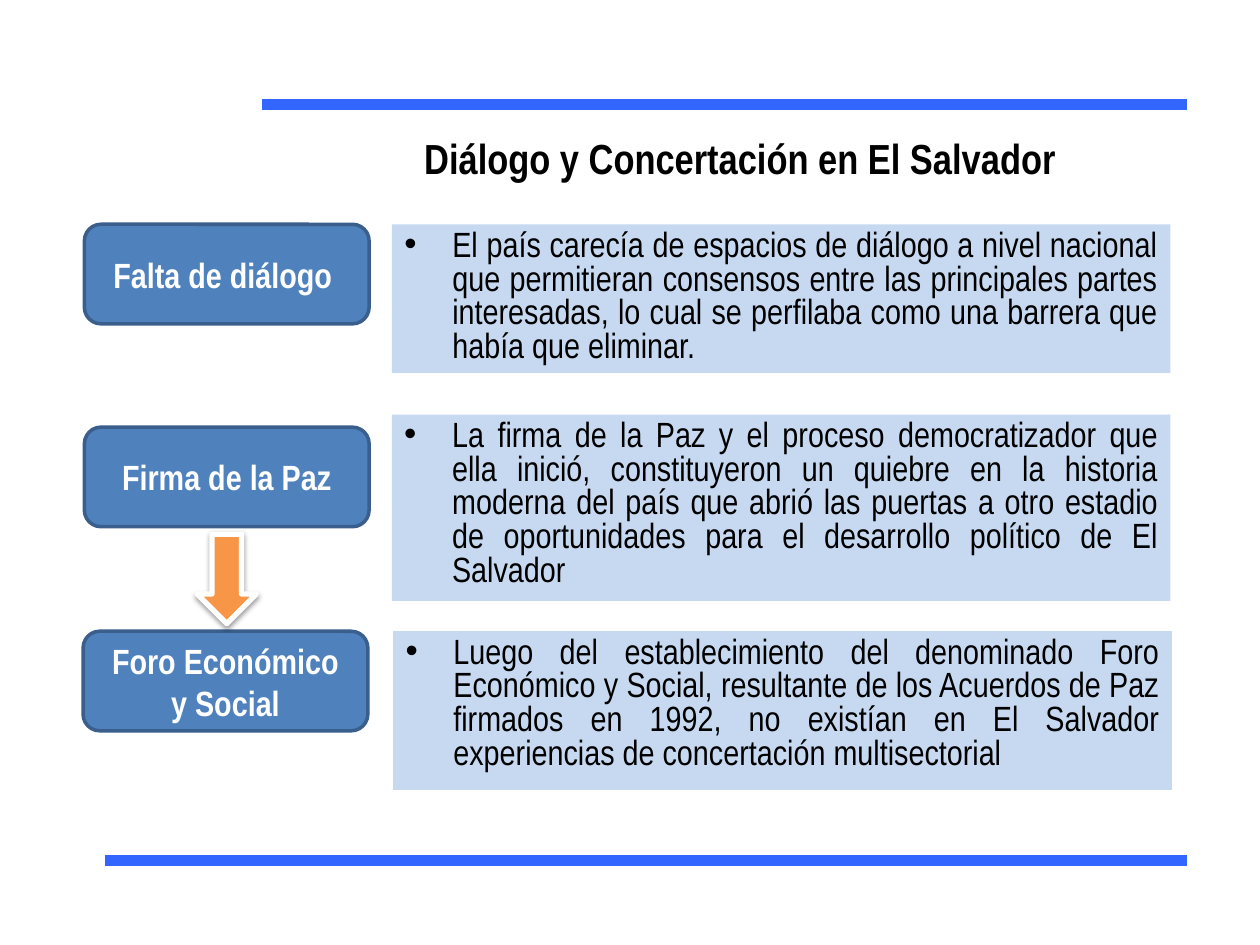
from collections import namedtuple

from lxml import etree
from pptx import Presentation
from pptx.dml.color import RGBColor
from pptx.enum.shapes import MSO_CONNECTOR, MSO_SHAPE
from pptx.enum.text import MSO_ANCHOR, MSO_AUTO_SIZE, PP_ALIGN
from pptx.oxml import parse_xml
from pptx.oxml.ns import nsdecls, qn
from pptx.util import Inches, Pt

TOP, MIDDLE = MSO_ANCHOR.TOP, MSO_ANCHOR.MIDDLE
CENTER, JUSTIFY = PP_ALIGN.CENTER, PP_ALIGN.JUSTIFY
STRAIGHT = MSO_CONNECTOR.STRAIGHT
ROUNDED, RECTANGLE, DOWN_ARROW = (
    MSO_SHAPE.ROUNDED_RECTANGLE, MSO_SHAPE.RECTANGLE, MSO_SHAPE.DOWN_ARROW)

COLORS = {
    "rule": "3366FF", "panel": "C6D9F1", "label": "4F81BD", "label_edge": "3A5F8C",
    "arrow": "F79646", "white": "FFFFFF", "black": "000000",
}
FONT = "Arial Narrow"
Box = namedtuple("Box", "left top width height")

TITLE = " Diálogo y Concertación en El Salvador"
TITLE_BOX = Box(2.5, 1, 6.67, 0.5)
LABEL_SIZE = (2.26, 0.79)
PANEL_WIDTH = 6.18
INDENT = Inches(0.38)
RULES = [(2.08, 0.83), (0.83, 6.83)]
RULE_END = 9.42

# label, label position, panel text, panel left, panel top, panel height
TOPICS = [
    ("Falta de diálogo ", (0.67, 1.78),
     "El país carecía de espacios de diálogo a nivel nacional que permitieran "
     "consensos entre las principales partes interesadas, lo cual se perfilaba "
     "como una barrera que había que eliminar.", 3.11, 1.78, 1.18),
    ("Firma de la Paz", (0.67, 3.39),
     "La firma de la Paz y el proceso democratizador que ella inició, "
     "constituyeron un quiebre en la historia moderna del país que abrió las "
     "puertas a otro estadio de oportunidades para el desarrollo político de "
     "El Salvador", 3.11, 3.29, 1.48),
    ("Foro Económico y Social", (0.66, 5.01),
     "Luego del establecimiento del denominado Foro Económico y Social, "
     "resultante de los Acuerdos de Paz firmados en 1992, no existían en El "
     "Salvador experiencias de concertación multisectorial", 3.12, 5.01, 1.26),
]


def color(name):
    return RGBColor.from_string(COLORS[name])


def set_values(target, values):
    for name, value in values.items():
        setattr(target, name, value)


def place(shape, box):
    set_values(shape, {name: Inches(value) for name, value in box._asdict().items()})


def paint(shape, fill, edge=None, width=0):
    shape.fill.solid()
    shape.fill.fore_color.rgb = color(fill)
    if edge:
        shape.line.color.rgb = color(edge)
        shape.line.width = Pt(width)
    else:
        shape.line.fill.background()


def add_shape(page, kind, box):
    shape = page.shapes.add_shape(kind, *map(Inches, box))
    shape.shadow.inherit = False
    return shape


def write(shape, text, size, ink, bold, align, anchor):
    frame = shape.text_frame
    set_values(frame, {"word_wrap": True, "auto_size": MSO_AUTO_SIZE.NONE,
                       "vertical_anchor": anchor})
    para = frame.paragraphs[0]
    para.alignment = align
    span = para.add_run()
    span.text = text
    set_values(span.font, {"name": FONT, "size": Pt(size), "bold": bold})
    span.font.color.rgb = color(ink)
    return para


def add_bullet(para):
    props = para._p.get_or_add_pPr()
    props.set("marL", str(INDENT))
    props.set("indent", str(-INDENT))
    etree.SubElement(props, qn("a:buFont")).set("typeface", "Arial")
    etree.SubElement(props, qn("a:buChar")).set("char", "•")


def draw_rule(page, left, top):
    rule = page.shapes.add_connector(
        STRAIGHT, *map(Inches, (left, top, RULE_END, top)))
    rule.line.color.rgb = color("rule")
    rule.line.width = Pt(6)
    etree.SubElement(rule._element.spPr, qn("a:effectLst"))


def draw_title(page, box):
    title = page.shapes.title
    place(title, box)
    write(title, TITLE, 24, "black", True, CENTER, TOP)


def draw_label(page, box, text):
    label = add_shape(page, ROUNDED, box)
    paint(label, "label", "label_edge", 2)
    write(label, text, 20, "white", True, CENTER, MIDDLE)


def draw_panel(panel, box, text):
    place(panel, box)
    paint(panel, "panel")
    para = write(panel, text, 20, "black", False, JUSTIFY, TOP)
    set_values(para, {"line_spacing": 0.8, "space_before": Pt(4)})
    add_bullet(para)


def draw_arrow(page, upper, lower):
    """Centre a down arrow in the gap between two labels."""
    width, height = 0.47, 0.71
    gap_top = upper.top + upper.height
    box = Box(upper.left + (upper.width - width) / 2,
              gap_top + (lower.top - gap_top - height) / 2, width, height)
    arrow = add_shape(page, DOWN_ARROW, box)
    paint(arrow, "arrow", "white", 3)
    effects = arrow._element.spPr.find(qn("a:effectLst"))
    effects.append(parse_xml(
        f'<a:outerShdw {nsdecls("a")} blurRad="{Pt(3.1)}" dist="{Pt(1.6)}" '
        f'dir="5400000" rotWithShape="0"><a:srgbClr val="{COLORS["black"]}">'
        '<a:alpha val="38000"/></a:srgbClr></a:outerShdw>'))


def draw_topics(page):
    label_boxes = []
    for index, (label, corner, text, left, top, height) in enumerate(TOPICS):
        label_box = Box(*corner, *LABEL_SIZE)
        panel_box = Box(left, top, PANEL_WIDTH, height)
        panel = (add_shape(page, RECTANGLE, panel_box) if index
                 else page.placeholders[1])
        draw_panel(panel, panel_box, text)
        draw_label(page, label_box, label)
        label_boxes.append(label_box)
    draw_arrow(page, *label_boxes[1:])


def main():
    deck = Presentation()
    deck.slide_width, deck.slide_height = Inches(10), Inches(7.5)
    page = deck.slides.add_slide(deck.slide_layouts[1])
    for left, top in RULES:
        draw_rule(page, left, top)
    draw_title(page, TITLE_BOX)
    draw_topics(page)
    deck.save("out.pptx")


if __name__ == "__main__":
    main()
